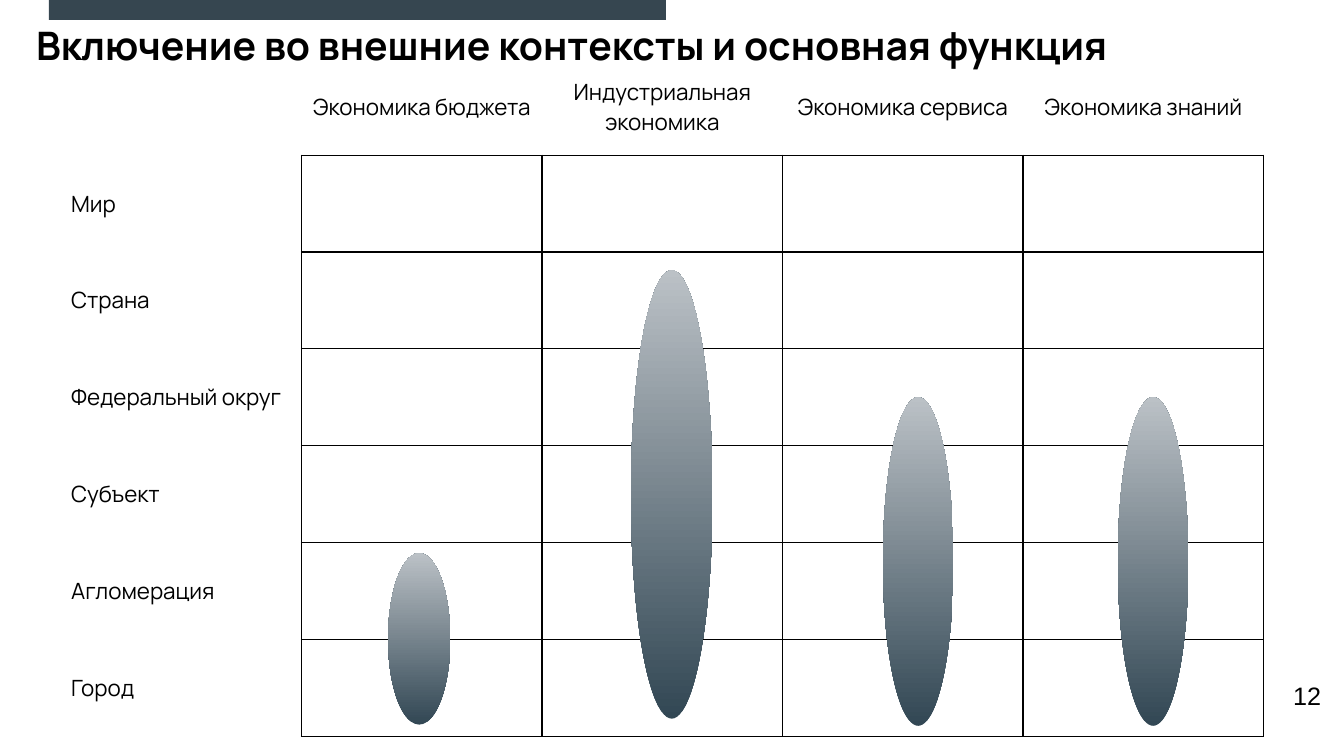
from lxml.etree import SubElement as Sub
from pptx import Presentation
from pptx.dml.color import RGBColor as Rgb
from pptx.enum.shapes import MSO_SHAPE as Form
from pptx.enum.text import MSO_ANCHOR as Anchor, PP_ALIGN as Align
from pptx.oxml import parse_xml
from pptx.oxml.ns import nsdecls, qn
from pptx.util import Cm, Pt

HUES = {"bar": "364650", "dark": "324754", "light": "BBC1C6", "ink": "000000"}
HEADS = ["Экономика бюджета", "Индустриальная экономика", "Экономика сервиса", "Экономика знаний"]
LEVELS = ["Мир", "Страна", "Федеральный округ", "Субъект", "Агломерация", "Город"]
SPANS = [
    (15.9, 6.81, 2.06, 11.3),
    (22.25, 10.01, 1.78, 8.28),
    (28.17, 10.01, 1.78, 8.28),
    (9.78, 13.94, 1.57, 4.32),
]


def write(para, text, size, face="Manrope", bold=False):
    run = para.add_run()
    run.text = text
    font = run.font
    font.size, font.name, font.bold = Pt(size), face, bold
    font.color.rgb = Rgb.from_string(HUES["ink"])


def edge(cell, shown):
    props = cell._tc.get_or_add_tcPr()
    for spot, side in enumerate("LRTB"):
        line = parse_xml(f'<a:ln{side} {nsdecls("a")} w="12700"/>')
        if side in shown:
            fill = Sub(line, qn("a:solidFill"))
            Sub(fill, qn("a:srgbClr"), val=HUES["ink"])
        else:
            Sub(line, qn("a:noFill"))
        props.insert(spot, line)


deck = Presentation()
deck.slide_width, deck.slide_height = Cm(33.87), Cm(19.05)
slide = deck.slides.add_slide(deck.slide_layouts[6])
shapes = slide.shapes

bar = shapes.add_shape(Form.RECTANGLE, Cm(1.23), Cm(0), Cm(15.55), Cm(0.5))
bar.shadow.inherit = False
bar.fill.solid()
bar.fill.fore_color.rgb = Rgb.from_string(HUES["bar"])
bar.line.fill.background()

frame = shapes.add_table(7, 5, Cm(1.54), Cm(1.47), Cm(30.28), Cm(17.08))
grid = frame.table
grid.first_row = grid.horz_banding = False
for col in grid.columns:
    col.width = Cm(6.06)
for row in grid.rows:
    row.height = Cm(2.44)

for r in range(7):
    for c in range(5):
        cell = grid.cell(r, c)
        cell.fill.background()
        cell.vertical_anchor = Anchor.MIDDLE
        para = cell.text_frame.paragraphs[0]
        if r and c:
            edge(cell, "LRTB")
        elif c:
            edge(cell, "B")
            para.alignment = Align.CENTER
            write(para, HEADS[c - 1], 16)
        elif r:
            edge(cell, "R")
            write(para, LEVELS[r - 1], 16)
        else:
            edge(cell, "")

for left, top, width, height in SPANS:
    oval = shapes.add_shape(Form.OVAL, Cm(left), Cm(top), Cm(width), Cm(height))
    oval.shadow.inherit = False
    oval.line.fill.background()
    oval.fill.gradient()
    oval.fill.gradient_angle = 90
    for stop, hue in zip(oval.fill.gradient_stops, ("dark", "light")):
        stop.color.rgb = Rgb.from_string(HUES[hue])

page = shapes.add_textbox(Cm(32.46), Cm(17.02), Cm(1.2), Cm(0.91)).text_frame
page.word_wrap = True
page.margin_left = page.margin_top = page.margin_bottom = Cm(0.13)
page.margin_right = Cm(0)
write(page.paragraphs[0], "12", 18, "Arial")

title = shapes.add_textbox(Cm(0.91), Cm(0.39), Cm(32.84), Cm(1.63)).text_frame
title.word_wrap = True
title.vertical_anchor = Anchor.MIDDLE
title.margin_left = title.margin_right = title.margin_top = title.margin_bottom = Cm(0)
title.paragraphs[0].line_spacing = 0.9
write(title.paragraphs[0], "Включение во внешние контексты и основная функция", 28, bold=True)

deck.save("out.pptx")
